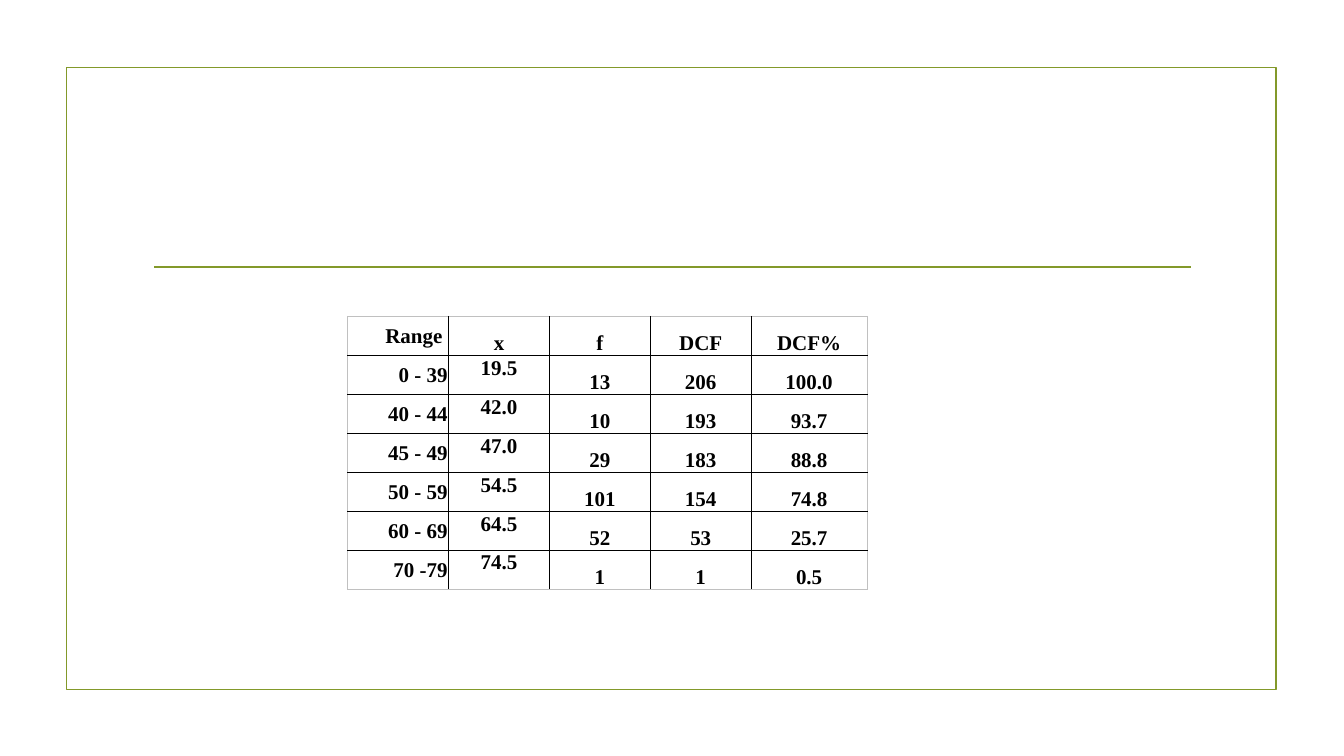
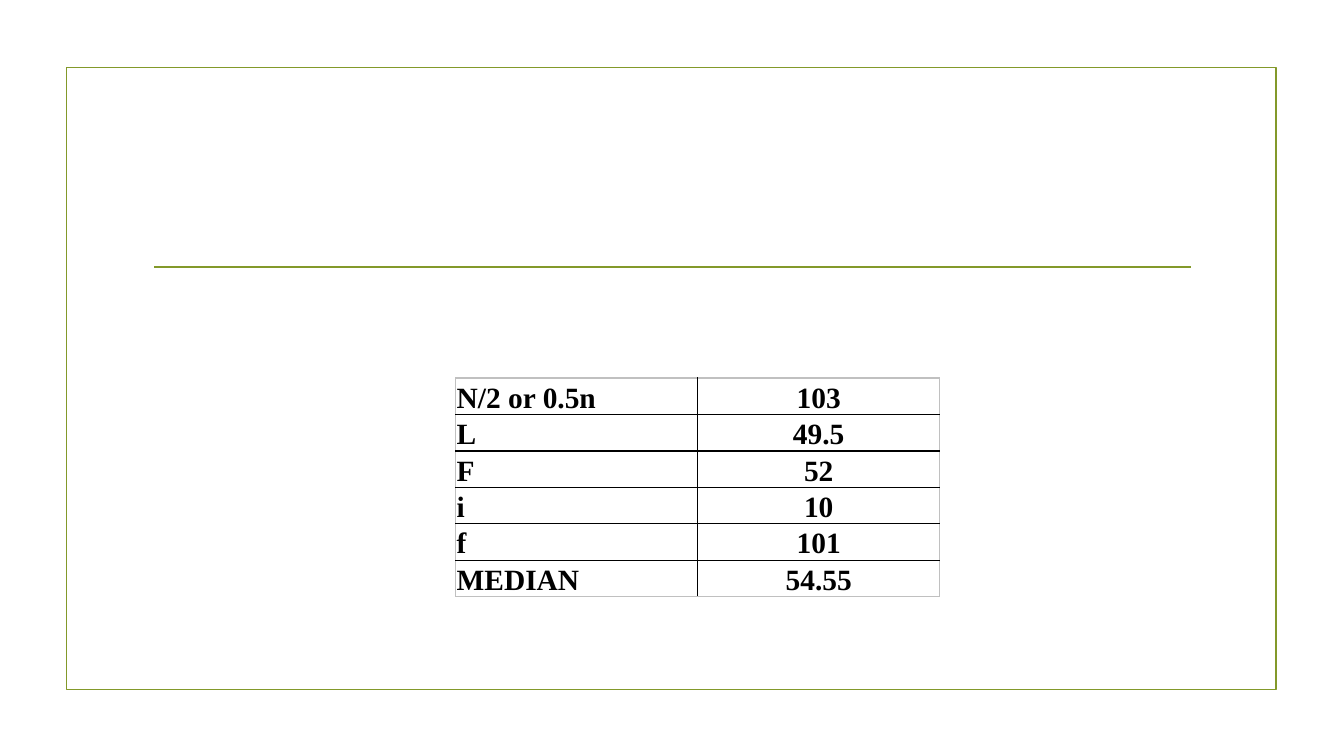
from dataclasses import dataclass

import lxml.etree
import pptx
import pptx.dml.color
import pptx.enum.shapes
import pptx.enum.text
import pptx.oxml.ns
import pptx.presentation
import pptx.slide
import pptx.table
import pptx.util

Inches = pptx.util.Inches
Pt = pptx.util.Pt
Align = pptx.enum.text.PP_ALIGN
Anchor = pptx.enum.text.MSO_ANCHOR


@dataclass(frozen=True)
class Theme:
    accent: str = "83992A"
    text: str = "000000"
    inner_border: str = "000000"
    outer_border: str = "C0C0C0"
    font: str = "Times New Roman"
    frequency_size: float = 15
    median_size: float = 21
    accent_width: float = 1.25
    border_width: float = 1


THEME = Theme()


@dataclass(frozen=True)
class Column:
    width: float
    align: Align = Align.CENTER
    header_anchor: Anchor = Anchor.BOTTOM
    body_anchor: Anchor = Anchor.BOTTOM


@dataclass(frozen=True)
class Grid:
    left: float
    top: float
    row_height: float
    text_size: float
    columns: tuple[Column, ...]
    rows: tuple[tuple[str, ...], ...]


FREQUENCIES = Grid(
    3.45, 3.14, 0.387, THEME.frequency_size,
    (
        Column(1, Align.RIGHT, Anchor.MIDDLE, Anchor.MIDDLE),
        Column(1, body_anchor=Anchor.TOP),
        Column(1),
        Column(1),
        Column(1.15),
    ),
    (
        ("Range ", "x", "f", "DCF", "DCF%"),
        ("0 - 39", "19.5", "13", "206", "100.0"),
        ("40 - 44", "42.0", "10", "193", "93.7"),
        ("45 - 49", "47.0", "29", "183", "88.8"),
        ("50 - 59", "54.5", "101", "154", "74.8"),
        ("60 - 69", "64.5", "52", "53", "25.7"),
        ("70 -79", "74.5", "1", "1", "0.5"),
    ),
)

MEDIAN = Grid(
    4.52, 3.75, 0.362, THEME.median_size,
    (Column(2.4, Align.LEFT), Column(2.4)),
    (
        ("N/2 or 0.5n", "103"),
        ("L", "49.5"),
        ("F", "52"),
        ("i", "10"),
        ("f", "101"),
        ("MEDIAN", "54.55"),
    ),
)


def rgb(value: str) -> pptx.dml.color.RGBColor:
    return pptx.dml.color.RGBColor.from_string(value)


def draw_frame(slide: pptx.slide.Slide) -> None:
    frame = slide.shapes.add_shape(
        pptx.enum.shapes.MSO_SHAPE.RECTANGLE,
        Inches(0.66), Inches(0.67), Inches(12), Inches(6.17),
    )
    frame.shadow.inherit = False
    frame.fill.background()
    divider = slide.shapes.add_connector(
        pptx.enum.shapes.MSO_CONNECTOR.STRAIGHT,
        Inches(1.53), Inches(2.65), Inches(11.81), Inches(2.65),
    )
    lxml.etree.SubElement(divider._element.spPr, pptx.oxml.ns.qn("a:effectLst"))
    for outline in (frame.line, divider.line):
        outline.color.rgb = rgb(THEME.accent)
        outline.width = Pt(THEME.accent_width)


def set_borders(cell: pptx.table._Cell, outer_edges: dict[str, bool]) -> None:
    properties = cell._tc.get_or_add_tcPr()
    qn = pptx.oxml.ns.qn
    for edge, is_outer in outer_edges.items():
        border = lxml.etree.SubElement(
            properties, qn(f"a:{edge}"), w=str(Pt(THEME.border_width))
        )
        fill = lxml.etree.SubElement(border, qn("a:solidFill"))
        color = THEME.outer_border if is_outer else THEME.inner_border
        lxml.etree.SubElement(fill, qn("a:srgbClr"), val=color)


def fill_cell(cell: pptx.table._Cell, text: str, size: float,
              align: Align, anchor: Anchor) -> None:
    cell.fill.background()
    cell.margin_left = cell.margin_right = cell.margin_top = Inches(0.01)
    cell.margin_bottom = 0
    cell.vertical_anchor = anchor
    cell.text = text
    paragraph = cell.text_frame.paragraphs[0]
    paragraph.alignment = align
    paragraph.font.name = THEME.font
    paragraph.font.size = Pt(size)
    paragraph.font.bold = True
    paragraph.font.color.rgb = rgb(THEME.text)


def draw_grid(slide: pptx.slide.Slide, grid: Grid) -> None:
    row_count, column_count = len(grid.rows), len(grid.columns)
    table = slide.shapes.add_table(
        row_count, column_count, Inches(grid.left), Inches(grid.top),
        Inches(sum(column.width for column in grid.columns)),
        Inches(grid.row_height * row_count),
    ).table
    table.first_row = table.horz_banding = False
    for c, column in enumerate(grid.columns):
        table.columns[c].width = Inches(column.width)
    for r, values in enumerate(grid.rows):
        table.rows[r].height = Inches(grid.row_height)
        for c, (column, value) in enumerate(zip(grid.columns, values)):
            cell = table.cell(r, c)
            set_borders(cell, {
                "lnL": c == 0,
                "lnR": c == column_count - 1,
                "lnT": r == 0,
                "lnB": r == row_count - 1,
            })
            anchor = column.body_anchor if r else column.header_anchor
            fill_cell(cell, value, grid.text_size, column.align, anchor)


def main() -> None:
    presentation = pptx.Presentation()
    presentation.slide_width = Inches(13.33)
    presentation.slide_height = Inches(7.5)
    for grid in (FREQUENCIES, MEDIAN):
        slide = presentation.slides.add_slide(presentation.slide_layouts[6])
        draw_frame(slide)
        draw_grid(slide, grid)
    presentation.save("out.pptx")


if __name__ == "__main__":
    main()
